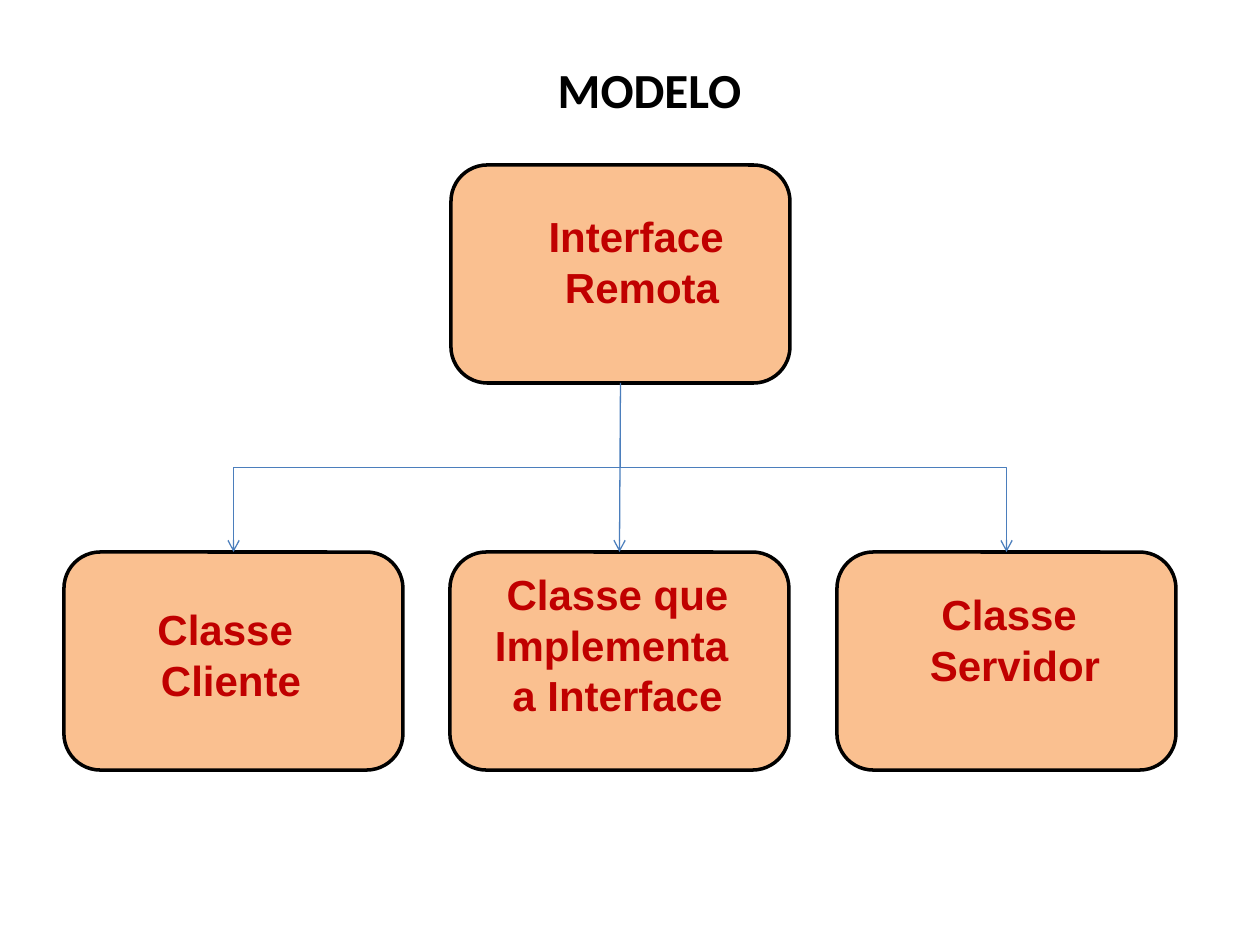
from lxml import etree
from pptx import Presentation
from pptx import util as u
from pptx.dml.color import RGBColor
from pptx.enum import shapes, text
from pptx.oxml.ns import qn

SCALE = 914400 / 126
BOX_W, BOX_H = 339, 218
TITLE = ("MODELO", (273, 53, 753, 72))
ROOT = (451, 165)
KIDS = [(64, 552), (450, 552), (837, 552)]
LABELS = [
    (["Interface ", "Remota"], (535, 204, 214, 115)),
    (["Classe ", "Cliente"], (144, 597, 174, 152)),
    (["Classe que", "Implementa ", "a Interface"], (481, 562, 273, 204)),
    (["Classe ", "Servidor"], (916, 582, 198, 152)),
]


def px(*vals):
    return [u.Emu(round(v * SCALE)) for v in vals]


def color(code):
    return RGBColor.from_string(code)


def write(frame, lines, font, size, ink, pitch=None):
    frame.auto_size = text.MSO_AUTO_SIZE.NONE
    frame.vertical_anchor = text.MSO_ANCHOR.TOP
    for i, line in enumerate(lines):
        para = frame.paragraphs[0] if i == 0 else frame.add_paragraph()
        para.alignment = text.PP_ALIGN.CENTER
        if pitch:
            para.line_spacing = u.Pt(pitch)
        run = para.add_run()
        run.text = line
        run.font.name = font
        run.font.size = u.Pt(size)
        run.font.bold = True
        run.font.color.rgb = color(ink)


def add_box(slide, left, top):
    box = slide.shapes.add_shape(
        shapes.MSO_SHAPE.ROUNDED_RECTANGLE, *px(left, top, BOX_W, BOX_H))
    box.shadow.inherit = False
    box.fill.solid()
    box.fill.fore_color.rgb = color("FAC090")
    box.line.color.rgb = color("000000")
    box.line.width = u.Pt(2)


def add_arrow(slide, start, end):
    (x1, y1), (x2, y2) = start, end
    kind, turn = shapes.MSO_CONNECTOR.STRAIGHT, None
    if abs(x2 - x1) > 10:
        kind = shapes.MSO_CONNECTOR.ELBOW
        mid_x, mid_y = (x1 + x2) / 2, (y1 + y2) / 2
        half_w, half_h = (y2 - y1) / 2, abs(x2 - x1) / 2
        side = 1 if x2 < x1 else -1
        turn = 90 if side > 0 else 270
        x1, x2 = mid_x - side * half_w, mid_x + side * half_w
        y1, y2 = mid_y - half_h, mid_y + half_h
    arrow = slide.shapes.add_connector(kind, *px(x1, y1, x2, y2))
    arrow.line.color.rgb = color("4B7EBC")
    arrow.line.width = u.Pt(0.75)
    props = arrow.element.spPr
    if turn:
        props.find(qn("a:xfrm")).set("rot", str(turn * 60000))
    etree.SubElement(props.find(qn("a:ln")), qn("a:tailEnd"), type="arrow")
    etree.SubElement(props, qn("a:effectLst"))


def main():
    deck = Presentation()
    deck.slide_width, deck.slide_height = px(1260, 945)
    slide = deck.slides.add_slide(deck.slide_layouts[5])

    title = slide.shapes.title
    name, area = TITLE
    title.left, title.top, title.width, title.height = px(*area)
    write(title.text_frame, [name], "Calibri", 28, "000000")

    for spot in [ROOT, *KIDS]:
        add_box(slide, *spot)

    for lines, area in LABELS:
        label = slide.shapes.add_textbox(*px(*area))
        label.text_frame.word_wrap = False
        write(label.text_frame, lines, "Arial", 24, "C00000", 29)

    start = (ROOT[0] + BOX_W / 2, ROOT[1] + BOX_H)
    for left, top in KIDS:
        add_arrow(slide, start, (left + BOX_W / 2, top))

    deck.save("out.pptx")


if __name__ == "__main__":
    main()
